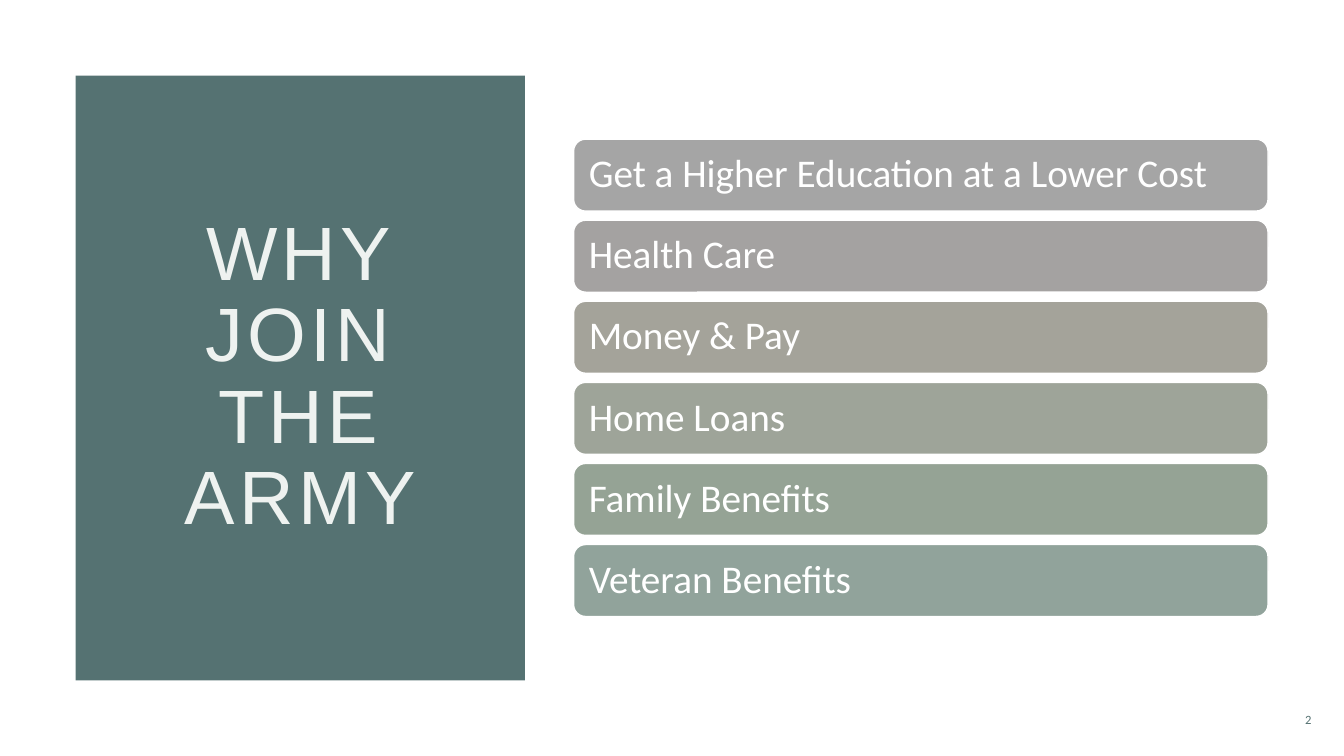
from pptx import Presentation
from pptx.dml.color import RGBColor
from pptx.enum.shapes import MSO_SHAPE
from pptx.enum.text import MSO_ANCHOR, PP_ALIGN
from pptx.util import Pt

RECTANGLE = MSO_SHAPE.RECTANGLE
ROUNDED = MSO_SHAPE.ROUNDED_RECTANGLE
MIDDLE = MSO_ANCHOR.MIDDLE
LEFT, CENTER, RIGHT = PP_ALIGN.LEFT, PP_ALIGN.CENTER, PP_ALIGN.RIGHT

TEAL = RGBColor(0x55, 0x72, 0x72)
PALE = RGBColor(0xEE, 0xF2, 0xF0)
WHITE = RGBColor(0xFF, 0xFF, 0xFF)

BENEFITS = [
    ("Get a Higher Education at a Lower Cost", RGBColor(0xA5, 0xA5, 0xA5)),
    ("Health Care", RGBColor(0xA4, 0xA2, 0xA1)),
    ("Money & Pay", RGBColor(0xA4, 0xA3, 0x9A)),
    ("Home Loans", RGBColor(0x9E, 0xA4, 0x99)),
    ("Family Benefits", RGBColor(0x95, 0xA3, 0x95)),
    ("Veteran Benefits", RGBColor(0x91, 0xA3, 0x9B)),
]


def write(shape, text, font, size, color, align, spacing=0):
    frame = shape.text_frame
    frame.word_wrap = True
    frame.vertical_anchor = MIDDLE
    para = frame.paragraphs[0]
    para.alignment = align
    para.line_spacing = 0.9
    span = para.add_run()
    span.text = text
    span.font.name = font
    span.font.size = Pt(size)
    span.font.color.rgb = color
    if spacing:
        span.font._element.set("spc", str(spacing * 100))


def add_block(page, kind, box, fill):
    block = page.shapes.add_shape(kind, *map(Pt, box))
    block.shadow.inherit = False
    block.fill.solid()
    block.fill.fore_color.rgb = fill
    return block


def title_panel(page, box, margin):
    left, top, width, height = box
    panel = add_block(page, RECTANGLE, box, TEAL)
    panel.line.fill.background()
    title = page.shapes.title
    title._element.addprevious(panel._element)
    title.left, title.top = Pt(left + margin), Pt(top + margin)
    title.width, title.height = Pt(width - 2 * margin), Pt(height - 2 * margin)
    write(title, "WHY JOIN THE ARMY", "Arial", 54, PALE, CENTER, 3)


def benefit_list(page, box, gap):
    left, top, width, height = box
    bar_height = (height + gap) / len(BENEFITS) - gap
    for index, (label, fill) in enumerate(BENEFITS):
        bar_top = top + index * (bar_height + gap)
        bar = add_block(page, ROUNDED, (left, bar_top, width, bar_height), fill)
        bar.line.color.rgb = WHITE
        bar.line.width = Pt(1)
        frame = bar.text_frame
        frame.margin_left = frame.margin_right = Pt(8.4)
        frame.margin_top = frame.margin_bottom = Pt(0)
        write(bar, label, "Calibri", 28, WHITE, LEFT)


def page_number(page, box):
    number = page.shapes.add_textbox(*map(Pt, box))
    write(number, "2", "Calibri", 9, TEAL, RIGHT, 3)


def main():
    deck = Presentation()
    deck.slide_width, deck.slide_height = Pt(960), Pt(540)
    page = deck.slides.add_slide(deck.slide_layouts[5])
    title_panel(page, (54, 54, 321, 432), 54)
    benefit_list(page, (409.7, 99.4, 496.1, 341), 6.5)
    page_number(page, (875.5, 500.4, 68.4, 28.8))
    deck.save("out.pptx")


if __name__ == "__main__":
    main()
